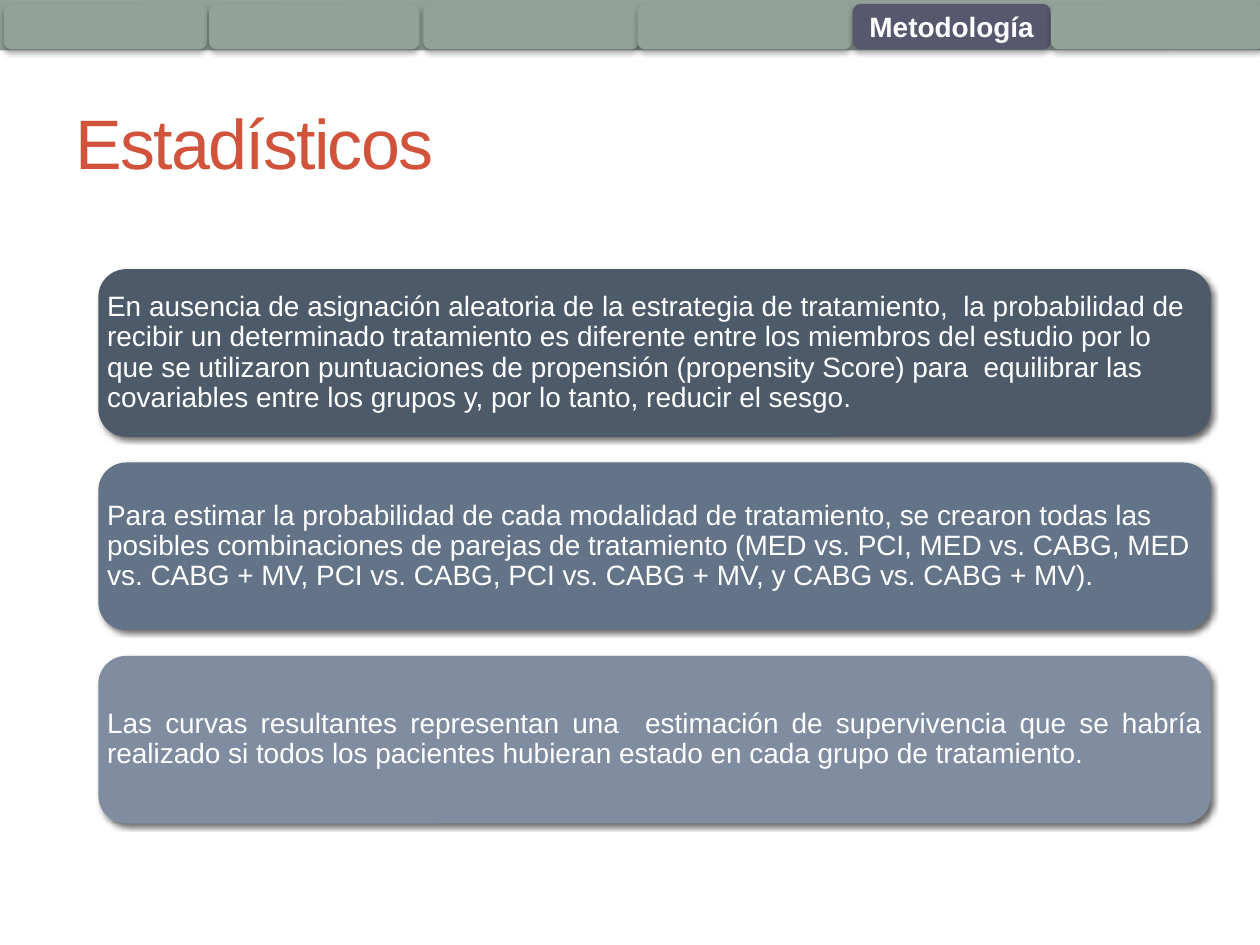
import pptx
import pptx.dml.color
import pptx.enum.shapes
import pptx.enum.text
import pptx.oxml
import pptx.oxml.ns
import pptx.util

Pt = pptx.util.Pt
ALIGN = pptx.enum.text.PP_ALIGN
SHAPES = pptx.enum.shapes.MSO_SHAPE

COLORS = {
    "bar": "93A299",
    "active": "57576E",
    "title": "D2533C",
    "text": "FFFFFF",
    "shadow": "000000",
}
TITLE = "Estadísticos"
# left, width, label
TABS = [
    (2.2, 116, ""),
    (119.5, 120.2, ""),
    (242, 123, ""),
    (364.4, 122.4, ""),
    (487.4, 113, "Metodología"),
    (600.5, 121.7, ""),
]
# fill, alignment, text
CARDS = [
    ("4C5A6A", ALIGN.LEFT,
     "En ausencia de asignación aleatoria de la estrategia de tratamiento,  la probabilidad de "
     "recibir un determinado tratamiento es diferente entre los miembros del estudio por lo que "
     "se utilizaron puntuaciones de propensión (propensity Score) para  equilibrar las "
     "covariables entre los grupos y, por lo tanto, reducir el sesgo."),
    ("637388", ALIGN.LEFT,
     "Para estimar la probabilidad de cada modalidad de tratamiento, se crearon todas las "
     "posibles combinaciones de parejas de tratamiento (MED vs. PCI, MED vs. CABG, MED vs. "
     "CABG + MV, PCI vs. CABG, PCI vs. CABG + MV, y CABG vs. CABG + MV)."),
    ("808DA0", ALIGN.JUSTIFY,
     "Las curvas resultantes representan una  estimación de supervivencia que se habría "
     "realizado si todos los pacientes hubieran estado en cada grupo de tratamiento."),
]
CARD_LEFT, CARD_TOP, CARD_WIDTH, CARD_HEIGHT = 56.2, 153.8, 635.8, 95.8
CARD_PITCH = 110.5
# opacity in percent, blur, distance, direction in degrees
TAB_SHADOW = (32, 3.5, 2.2, 90)
CARD_SHADOW = (60, 3, 2, 45)


def rgb(color):
    return pptx.dml.color.RGBColor.from_string(color)


def add_block(slide, kind, box, fill, shadow=None):
    """Add a borderless filled shape, with an outer shadow if one is given."""
    shape = slide.shapes.add_shape(kind, *[Pt(length) for length in box])
    shape.fill.solid()
    shape.fill.fore_color.rgb = rgb(fill)
    shape.line.fill.background()
    shape.shadow.inherit = False
    if shadow:
        opacity, blur, distance, direction = shadow
        effects = shape._element.spPr.find(pptx.oxml.ns.qn("a:effectLst"))
        effects.append(pptx.oxml.parse_xml(
            f'<a:outerShdw {pptx.oxml.ns.nsdecls("a")} blurRad="{Pt(blur)}" '
            f'dist="{Pt(distance)}" dir="{direction * 60000}" algn="ctr" rotWithShape="0">'
            f'<a:srgbClr val="{COLORS["shadow"]}"><a:alpha val="{opacity * 1000}"/>'
            '</a:srgbClr></a:outerShdw>'))
    return shape


def write(shape, text, size, color, alignment, bold=False):
    frame = shape.text_frame
    frame.word_wrap = True
    frame.vertical_anchor = pptx.enum.text.MSO_ANCHOR.MIDDLE
    paragraph = frame.paragraphs[0]
    paragraph.text = text
    paragraph.alignment = alignment
    font = paragraph.font
    font.name, font.size, font.bold = "Arial", Pt(size), bold
    font.color.rgb = rgb(color)
    return paragraph


def main():
    presentation = pptx.Presentation()
    presentation.slide_width, presentation.slide_height = Pt(720), Pt(540)
    slide = presentation.slides.add_slide(presentation.slide_layouts[6])

    add_block(slide, SHAPES.RECTANGLE, (0, 0, 720, 28.8), COLORS["bar"])

    title = slide.shapes.add_textbox(Pt(36), Pt(42), Pt(648), Pt(78))
    paragraph = write(title, TITLE, 40, COLORS["title"], ALIGN.LEFT)
    paragraph.font._element.set("spc", "-100")

    for left, width, label in TABS:
        fill = COLORS["active" if label else "bar"]
        tab = add_block(slide, SHAPES.ROUNDED_RECTANGLE, (left, 2.2, width, 26), fill, TAB_SHADOW)
        if label:
            write(tab, label, 16, COLORS["text"], ALIGN.CENTER, bold=True)

    for index, (fill, alignment, text) in enumerate(CARDS):
        box = (CARD_LEFT, CARD_TOP + index * CARD_PITCH, CARD_WIDTH, CARD_HEIGHT)
        card = add_block(slide, SHAPES.ROUNDED_RECTANGLE, box, fill, CARD_SHADOW)
        frame = card.text_frame
        # The rounded corners already inset the text
        frame.margin_left = frame.margin_right = Pt(0.4)
        frame.margin_top = frame.margin_bottom = Pt(0.4)
        paragraph = write(card, text, 16, COLORS["text"], alignment)
        paragraph.line_spacing = 0.9

    presentation.save("out.pptx")


if __name__ == "__main__":
    main()
